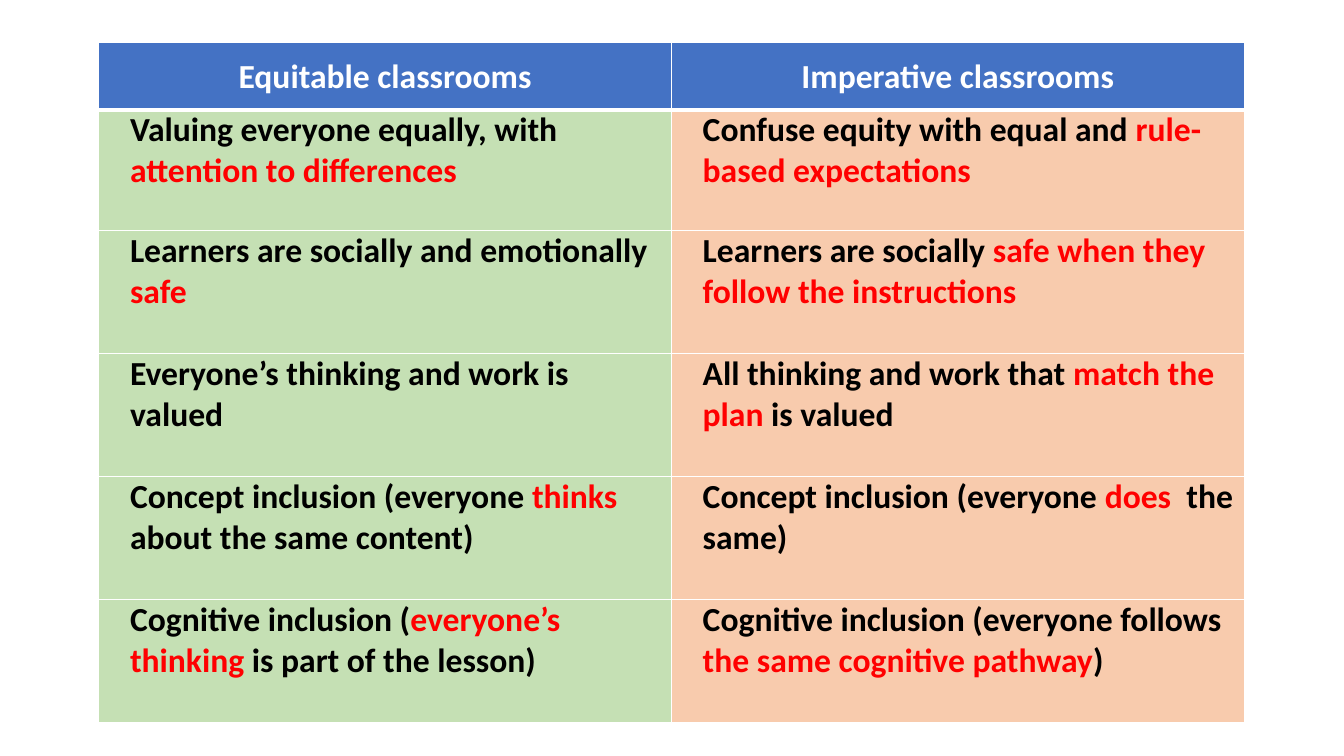
from lxml import etree
from pptx import Presentation
from pptx.dml.color import RGBColor
from pptx.enum.text import MSO_ANCHOR, PP_ALIGN
from pptx.oxml.ns import qn
from pptx.util import Inches, Pt

CENTER, LEFT = PP_ALIGN.CENTER, PP_ALIGN.LEFT
MIDDLE, TOP = MSO_ANCHOR.MIDDLE, MSO_ANCHOR.TOP

WHITE, BLACK, RED = "FFFFFF", "000000", "FF0000"
HEADER_BLUE = "4472C4"
COLUMN_FILLS = ["C5E0B4", "F8CBAD"]

HEADINGS = ["Equitable classrooms", "Imperative classrooms"]
# Words between asterisks are emphasised in red
COMPARISONS = [
    ["Valuing everyone equally, with *attention to differences*",
     "Confuse equity with equal and* rule-based expectations*"],
    ["Learners are socially and emotionally *safe*",
     "Learners are socially *safe when they follow the instructions*"],
    ["Everyone’s thinking and work is valued",
     "All thinking and work that *match the plan *is valued"],
    ["Concept inclusion (everyone *thinks *about the same content)",
     "Concept inclusion (everyone *does * the same)"],
    ["Cognitive inclusion (*everyone’s thinking* is part of the lesson)",
     "Cognitive inclusion (everyone follows *the same cognitive pathway*)"],
]
ROW_HEIGHTS = [0.67, 1.2] + [1.22] * 4
COLUMN_WIDTH = 5.68


def rgb(hex_color):
    return RGBColor.from_string(hex_color)


def add_borders(cell, bottom_width, top_width):
    widths = {"a:lnL": 1, "a:lnR": 1, "a:lnT": top_width, "a:lnB": bottom_width}
    properties = cell._tc.get_or_add_tcPr()
    for position, (side, width) in enumerate(widths.items()):
        line = etree.Element(qn(side), w=str(Pt(width)))
        fill = etree.SubElement(line, qn("a:solidFill"))
        etree.SubElement(fill, qn("a:srgbClr"), val=WHITE)
        properties.insert(position, line)


prs = Presentation()
prs.slide_width, prs.slide_height = Inches(13.33), Inches(7.5)
slide = prs.slides.add_slide(prs.slide_layouts[6])

# Table grid
comparison = slide.shapes.add_table(
    len(ROW_HEIGHTS), len(HEADINGS), Inches(0.98), Inches(0.42),
    Inches(COLUMN_WIDTH * len(HEADINGS)), Inches(sum(ROW_HEIGHTS))).table
comparison.horz_banding = False
for column in comparison.columns:
    column.width = Inches(COLUMN_WIDTH)
for row, height in zip(comparison.rows, ROW_HEIGHTS):
    row.height = Inches(height)

# Headings and statements
for row_index, statements in enumerate([HEADINGS] + COMPARISONS):
    is_header = row_index == 0
    for column_index, statement in enumerate(statements):
        cell = comparison.cell(row_index, column_index)
        cell.margin_left = cell.margin_right = Inches(0.06)
        cell.margin_top = cell.margin_bottom = 0
        cell.vertical_anchor = MIDDLE if is_header else TOP
        cell.fill.solid()
        cell.fill.fore_color.rgb = rgb(
            HEADER_BLUE if is_header else COLUMN_FILLS[column_index])
        add_borders(cell, 3 if is_header else 1, 3 if row_index == 1 else 1)

        paragraph = cell.text_frame.paragraphs[0]
        paragraph.alignment = CENTER if is_header else LEFT
        if is_header:
            paragraph.line_spacing = 1.07
            paragraph.space_after = Pt(8)
        else:
            paragraph._p.get_or_add_pPr().set("marL", str(Inches(0.25)))

        for part_index, part in enumerate(statement.split("*")):
            if not part:
                continue
            run = paragraph.add_run()
            run.text = part
            run.font.name = "Calibri"
            run.font.size = Pt(24)
            run.font.bold = True
            plain = WHITE if is_header else BLACK
            run.font.color.rgb = rgb(RED if part_index % 2 else plain)

prs.save("out.pptx")
